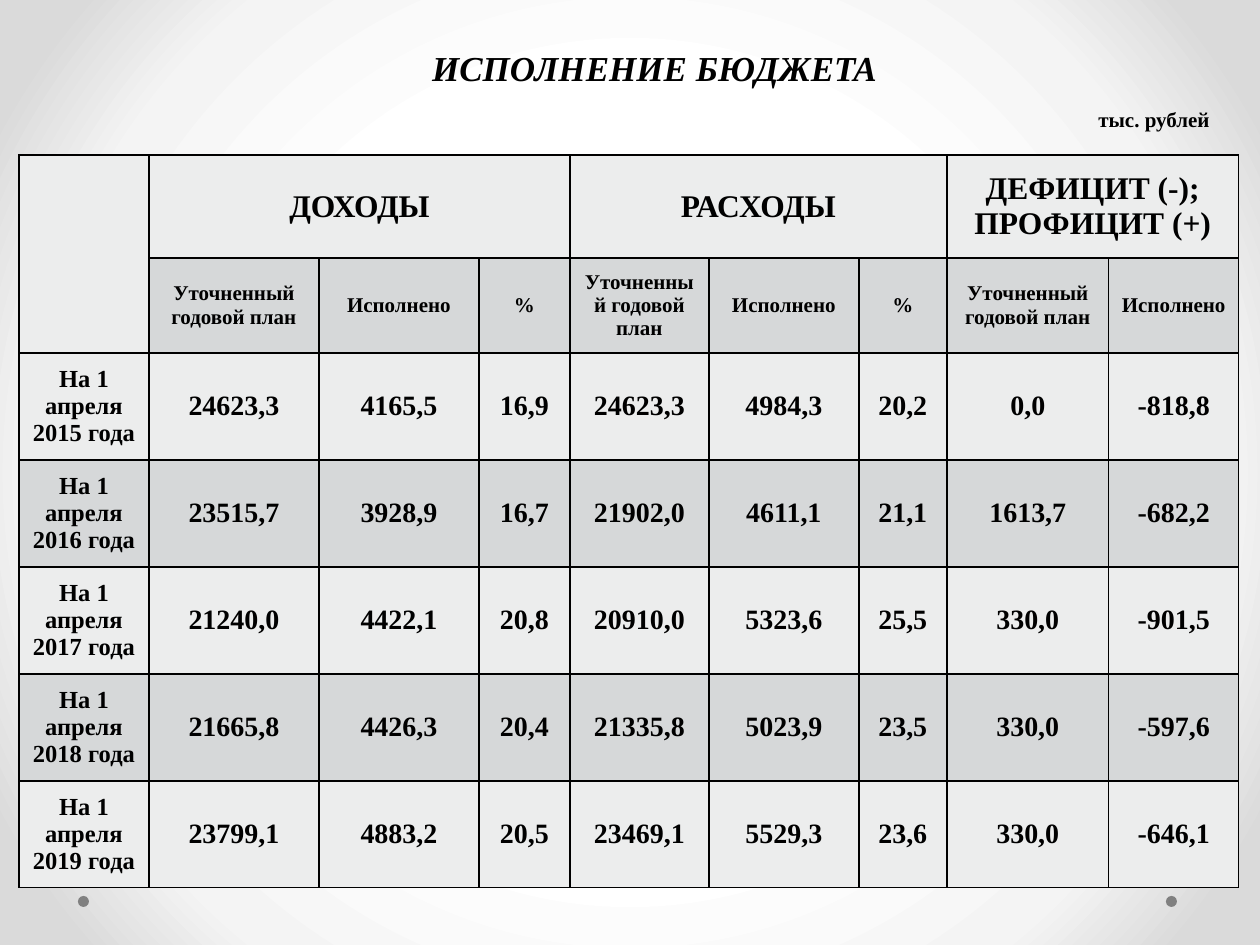
from pptx import Presentation
from pptx.dml.color import RGBColor
from pptx.enum.shapes import MSO_SHAPE as SHAPE
from pptx.enum.text import MSO_ANCHOR as ANCHOR, PP_ALIGN as ALIGN
from pptx.oxml import parse_xml
from pptx.oxml.ns import nsdecls
from pptx.util import Emu, Pt

FONT = "Times New Roman"
BLACK = RGBColor(0x00, 0x00, 0x00)
GRAY = RGBColor(0x80, 0x80, 0x80)
WHITE = RGBColor(0xFF, 0xFF, 0xFF)
PALE = RGBColor(0xF4, 0xF4, 0xF4)
SILVER = RGBColor(0xDA, 0xDA, 0xDA)
LIGHT_ROW = RGBColor(0xEC, 0xED, 0xED)
DARK_ROW = RGBColor(0xD6, 0xD8, 0xD9)

COLUMN_WIDTHS = [130, 170, 160, 91, 139, 150, 88, 162, 130]
ROW_HEIGHTS = [103, 95] + [107] * 5
GROUPS = [(1, 3, "ДОХОДЫ"), (4, 6, "РАСХОДЫ"), (7, 8, "ДЕФИЦИТ (-);\nПРОФИЦИТ (+)")]
PLAN, DONE = "Уточненный годовой план", "Исполнено"
SUBHEADS = [PLAN, DONE, "%", PLAN, DONE, "%", PLAN, DONE]
RESULTS = {
    2015: ["24623,3", "4165,5", "16,9", "24623,3", "4984,3", "20,2", "0,0", "-818,8"],
    2016: ["23515,7", "3928,9", "16,7", "21902,0", "4611,1", "21,1", "1613,7", "-682,2"],
    2017: ["21240,0", "4422,1", "20,8", "20910,0", "5323,6", "25,5", "330,0", "-901,5"],
    2018: ["21665,8", "4426,3", "20,4", "21335,8", "5023,9", "23,5", "330,0", "-597,6"],
    2019: ["23799,1", "4883,2", "20,5", "23469,1", "5529,3", "23,6", "330,0", "-646,1"],
}


def px(n):
    return Emu(round(n * 914400 / 126))


def write(tf, text, size, align=ALIGN.CENTER, italic=False):
    tf.text = text
    for p in tf.paragraphs:
        p.alignment = align
        p.font.name = FONT
        p.font.size = Pt(size)
        p.font.bold = True
        p.font.italic = italic
        p.font.color.rgb = BLACK


def set_background(slide):
    """Fill the slide with a gradient that spreads from its centre."""
    stops = "".join(
        f'<a:gs pos="{pos * 1000}"><a:srgbClr val="{color}"/></a:gs>'
        for pos, color in [(50, WHITE), (76, PALE), (92, SILVER)])
    slide.element.cSld.insert(0, parse_xml(
        f'<p:bg {nsdecls("p", "a")}><p:bgPr><a:gradFill rotWithShape="1">'
        f'<a:gsLst>{stops}</a:gsLst><a:path path="circle">'
        '<a:fillToRect l="50000" t="50000" r="50000" b="50000"/></a:path>'
        '</a:gradFill><a:effectLst/></p:bgPr></p:bg>'))


def add_dot(slide, left, top):
    sp = slide.shapes.add_shape(SHAPE.OVAL, px(left), px(top), px(11), px(11))
    sp.shadow.inherit = False
    sp.fill.solid()
    sp.fill.fore_color.rgb = GRAY
    sp.line.fill.background()


def add_label(slide, box, text, size, **style):
    tf = slide.shapes.add_textbox(*map(px, box)).text_frame
    tf.word_wrap = True
    write(tf, text, size, **style)


def style_cell(cell, color):
    """Give the cell black borders, a plain fill and middle anchoring."""
    tc_pr = cell._tc.get_or_add_tcPr()
    for side in "LRTB":
        tc_pr.append(parse_xml(
            f'<a:ln{side} {nsdecls("a")} w="12700"><a:solidFill>'
            f'<a:srgbClr val="{BLACK}"/></a:solidFill></a:ln{side}>'))
    cell.fill.solid()
    cell.fill.fore_color.rgb = color
    cell.vertical_anchor = ANCHOR.MIDDLE


def add_budget_table(slide):
    frame = slide.shapes.add_table(
        len(ROW_HEIGHTS), len(COLUMN_WIDTHS), px(19), px(155),
        px(sum(COLUMN_WIDTHS)), px(sum(ROW_HEIGHTS)))
    table = frame.table
    table.first_row = table.horz_banding = False
    for column, width in zip(table.columns, COLUMN_WIDTHS):
        column.width = px(width)
    for i, (row, height) in enumerate(zip(table.rows, ROW_HEIGHTS)):
        row.height = px(height)
        for cell in row.cells:
            style_cell(cell, DARK_ROW if i % 2 else LIGHT_ROW)

    table.cell(0, 0).merge(table.cell(1, 0))
    for first, last, text in GROUPS:
        table.cell(0, first).merge(table.cell(0, last))
        write(table.cell(0, first).text_frame, text, 18)
    for j, text in enumerate(SUBHEADS, 1):
        write(table.cell(1, j).text_frame, text, 12)
    for i, (year, values) in enumerate(RESULTS.items(), 2):
        write(table.cell(i, 0).text_frame, f"На 1 апреля {year} года", 14)
        for j, value in enumerate(values, 1):
            write(table.cell(i, j).text_frame, value, 16)


def main():
    prs = Presentation()
    prs.slide_width, prs.slide_height = px(1260), px(945)
    slide = prs.slides.add_slide(prs.slide_layouts[6])
    set_background(slide)
    for left in (1166, 78):
        add_dot(slide, left, 896)
    add_budget_table(slide)
    add_label(slide, (392, 40, 525, 55), "ИСПОЛНЕНИЕ БЮДЖЕТА", 20, italic=True)
    add_label(slide, (1086, 100, 149, 38), "тыс. рублей", 12, align=ALIGN.LEFT)
    prs.save("out.pptx")


if __name__ == "__main__":
    main()
